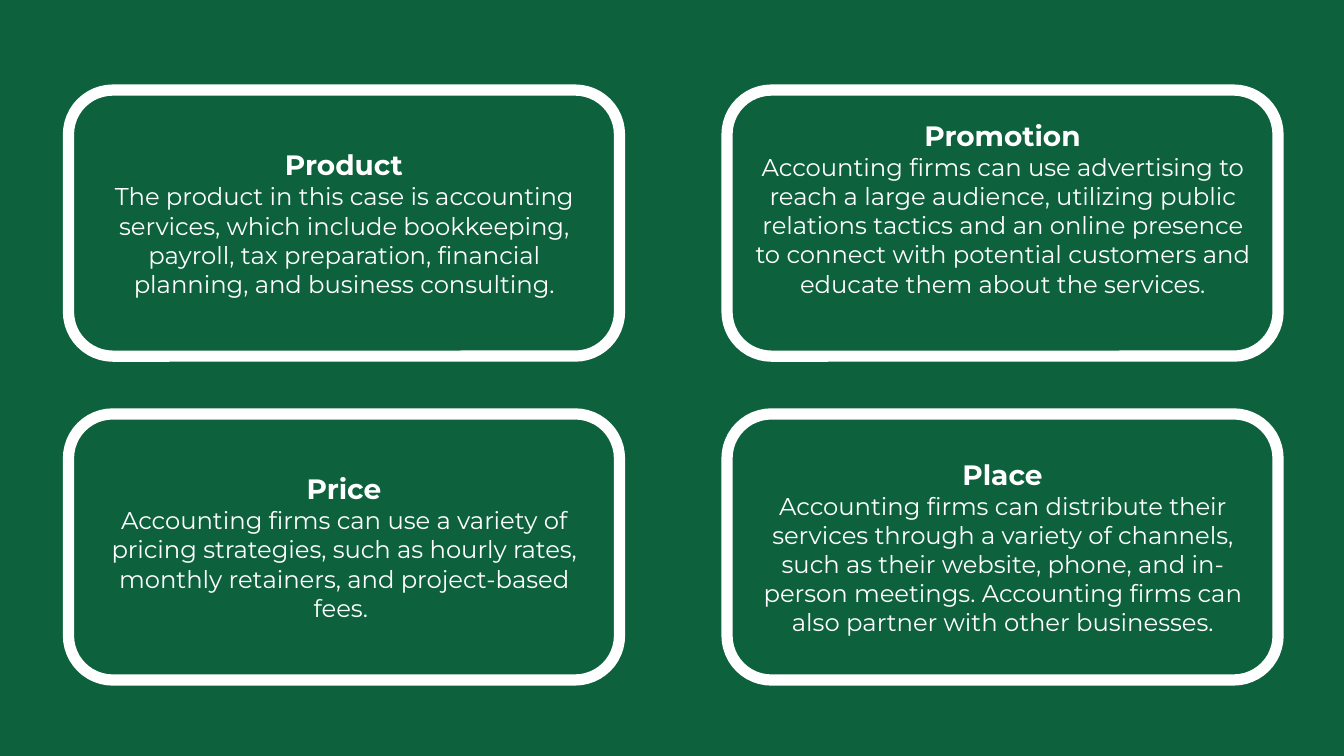
"""Build a slide with the four Ps of marketing for accounting firms."""
from dataclasses import dataclass

from pptx import Presentation
from pptx import util as u
from pptx.dml.color import RGBColor
from pptx.enum import shapes, text

CARDS = [
    [("Product", "The product in this case is accounting services, which include "
      "bookkeeping, payroll, tax preparation, financial planning, and business "
      "consulting.", 0),
     ("Promotion", "Accounting firms can use advertising to reach a large audience, "
      "utilizing public relations tactics and an online presence to connect with "
      "potential customers and educate them about the services.", 0.22)],
    [("Price", "Accounting firms can use a variety of pricing strategies, such as "
      "hourly rates, monthly retainers, and project-based fees. ", 0),
     ("Place", "Accounting firms can distribute their services through a variety of "
      "channels, such as their website, phone, and in-person meetings. Accounting "
      "firms can also partner with other businesses.", 0)],
]


@dataclass(frozen=True)
class Theme:
    """Colours, font and type sizes."""
    green: RGBColor = RGBColor(0x0D, 0x62, 0x3D)
    white: RGBColor = RGBColor(0xFF, 0xFF, 0xFF)
    font: str = "Montserrat"
    head: int = 15
    body: int = 13
    edge: int = 6


@dataclass(frozen=True)
class Grid:
    """Card grid in inches."""
    left: float = 0.51
    top: float = 0.67
    wide: float = 4.1
    high: float = 1.98
    gap_x: float = 0.8
    gap_y: float = 0.43

    def cell(self, row, col):
        """Return left, top, width and height of a cell."""
        left = self.left + col * (self.wide + self.gap_x)
        top = self.top + row * (self.high + self.gap_y)
        return [u.Inches(n) for n in (left, top, self.wide, self.high)]


THEME, GRID = Theme(), Grid()


def write(para, words, size=THEME.body, bold=False):
    """Write centred words into a paragraph."""
    para.alignment = text.PP_ALIGN.CENTER
    run = para.add_run()
    run.text = words
    font = run.font
    font.name, font.size, font.bold = THEME.font, u.Pt(size), bold
    font.color.rgb = THEME.white


def add_card(slide, box, head, body, lift):
    """Add one rounded card, its text raised by extra bottom inset."""
    card = slide.shapes.add_shape(shapes.MSO_SHAPE.ROUNDED_RECTANGLE, *box)
    card.shadow.inherit = False
    card.fill.solid()
    card.fill.fore_color.rgb = THEME.green
    card.line.color.rgb = THEME.white
    card.line.width = u.Pt(THEME.edge)
    frame = card.text_frame
    frame.word_wrap = True
    frame.vertical_anchor = text.MSO_ANCHOR.MIDDLE
    frame.margin_left = frame.margin_right = frame.margin_top = u.Inches(0.1)
    frame.margin_bottom = u.Inches(0.1 + lift)
    write(frame.paragraphs[0], head, size=THEME.head, bold=True)
    write(frame.add_paragraph(), body)


def main():
    """Build and save the slide."""
    deck = Presentation()
    deck.slide_width = u.Inches(10)
    deck.slide_height = deck.slide_width * 9 // 16
    slide = deck.slides.add_slide(deck.slide_layouts[6])
    fill = slide.background.fill
    fill.solid()
    fill.fore_color.rgb = THEME.green
    for row, cards in enumerate(CARDS):
        for col, card in enumerate(cards):
            add_card(slide, GRID.cell(row, col), *card)
    deck.save("out.pptx")


if __name__ == "__main__":
    main()
